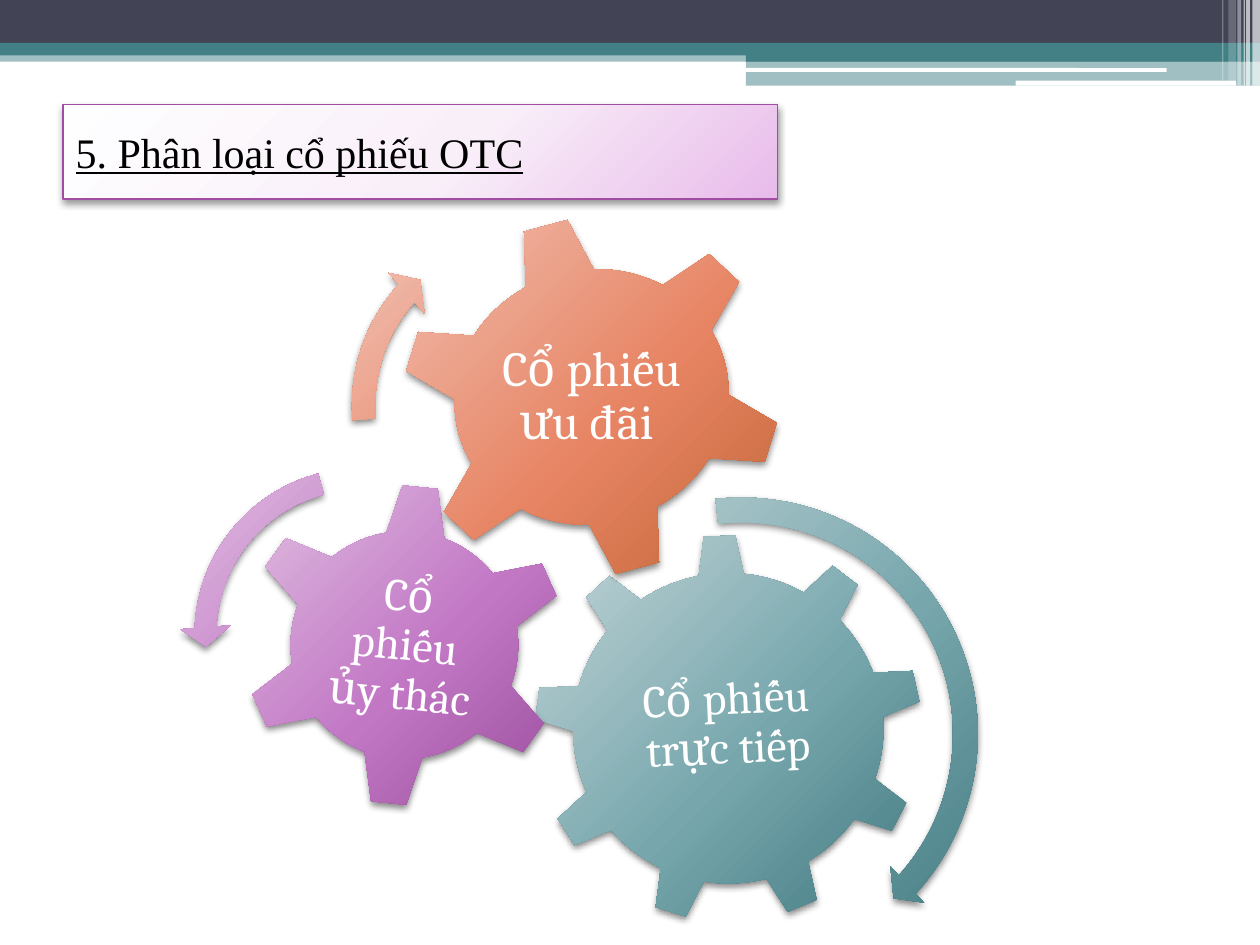
"""Builds a slide that sorts OTC shares into three interlocking gears."""
from pptx import Presentation, util as u
from pptx.dml.color import RGBColor
from pptx.enum import shapes, text
from pptx.oxml import parse_xml
from pptx.oxml.ns import nsdecls, qn

THEME = {
    "navy": "424456", "teal": "438086", "white": "FFFFFF", "black": "000000",
    "title_line": "A04DA3",
    "title_fill": ("FEFEFF", "F9EFF9", "E8BBEA"),
    "direct": ("C7D7DA", "77A7AD", "3E777D"),
    "trust": ("E2C6E3", "C277C5", "954898"),
    "preferred": ("F2C9BF", "E78463", "B75E2A"),
    "title_font": "Times New Roman", "title_size": 24,
    "gear_font": "Cambria", "gear_size": 26, "large_gear_size": 28,
}
KIND = shapes.MSO_SHAPE

deck = Presentation()
deck.slide_width, deck.slide_height = u.Inches(10), u.Inches(7.5)
CELL = deck.slide_width // 1000
page = deck.slides.add_slide(deck.slide_layouts[5])


def add_shape(kind, place, turn=0, adjustments=()):
    """Adds an unlined preset shape at a place given in grid cells."""
    shape = page.shapes.add_shape(kind, *(CELL * n for n in place))
    shape.rotation = turn
    for index, value in enumerate(adjustments):
        shape.adjustments[index] = value
    shape.line.fill.background()
    shape.shadow.inherit = False
    return shape


def shade(shape, colours, opacity=45):
    """Gives a lined shape a radial gradient and a soft shadow below."""
    stops = "".join(
        f'<a:gs pos="{place}000"><a:srgbClr val="{colour}"/></a:gs>'
        for place, colour in zip((0, 55, 100), colours))
    gradient = parse_xml(
        f'<a:gradFill {nsdecls("a")} rotWithShape="1"><a:gsLst>{stops}</a:gsLst>'
        '<a:path path="circle"><a:fillToRect l="-40000" t="-90000" '
        'r="140000" b="190000"/></a:path></a:gradFill>')
    shadow = parse_xml(
        f'<a:outerShdw {nsdecls("a")} blurRad="{u.Pt(4)}" dist="{u.Pt(2)}" '
        'dir="5400000" rotWithShape="0"><a:srgbClr val="000000">'
        f'<a:alpha val="{opacity}000"/></a:srgbClr></a:outerShdw>')
    properties = shape.element.spPr
    for old_fill in properties.findall(qn("a:solidFill")):
        properties.remove(old_fill)
    properties.find(qn("a:ln")).addprevious(gradient)
    shape.shadow.inherit = False
    properties.find(qn("a:effectLst")).append(shadow)


header_bars = [
    (KIND.RECTANGLE, (0, 40, 1000, 9), "teal", 50),
    (KIND.RECTANGLE, (0, 0, 1000, 34), "navy", 100),
    (KIND.RECTANGLE, (0, 34, 1000, 10), "teal", 100),
    (KIND.RECTANGLE, (592, 39, 408, 10), "teal", 100),
    (KIND.RECTANGLE, (592, 48, 408, 20), "teal", 50),
    (KIND.ROUNDED_RECTANGLE, (591, 54, 335, 3), "white", 100),
    (KIND.ROUNDED_RECTANGLE, (806, 64, 175, 4), "white", 100),
]
edge_stripes = [(994, 6, 68, 65), (989, 3, 68, 65), (987, 1, 68, 60),
                (982, 3, 68, 40), (975, 6, 64, 20), (970, 1, 64, 30)]
header_bars += [(KIND.RECTANGLE, (left, 0, width, height), "white", opacity)
                for left, width, height, opacity in edge_stripes]
for kind, place, colour, opacity in header_bars:
    bar = add_shape(kind, place)
    bar.fill.solid()
    bar.fill.fore_color.rgb = RGBColor.from_string(THEME[colour])
    if opacity < 100:
        tint = bar.element.spPr.find(qn("a:solidFill"))[0]
        tint.append(parse_xml(f'<a:alpha {nsdecls("a")} val="{opacity}000"/>'))

title = page.shapes.title
title.left, title.top, title.width, title.height = (
    CELL * n for n in (50, 83, 567, 75))
title.line.color.rgb = RGBColor.from_string(THEME["title_line"])
title.line.width = u.Pt(0.75)
shade(title, THEME["title_fill"], 40)
title.text_frame.vertical_anchor = text.MSO_ANCHOR.MIDDLE
para = title.text_frame.paragraphs[0]
para.alignment = text.PP_ALIGN.LEFT
span = para.add_run()
span.text = "5. Phân loại cổ phiếu OTC"
span.font.name = THEME["title_font"]
span.font.size = u.Pt(THEME["title_size"])
span.font.color.rgb = RGBColor.from_string(THEME["black"])
span.font.underline = True

gears = [
    (KIND.GEAR_9, (424, 424, 308, 308), -2.6, "direct",
     "Cổ phiếu trực tiếp", (485, 496, 184, 158), -2.6, "gear_size"),
    (KIND.GEAR_6, (192, 383, 258, 258), 5.7, "trust",
     "Cổ phiếu ủy thác ", (257, 449, 128, 127), 5.7, "gear_size"),
    (KIND.GEAR_6, (317, 171, 305, 288), -15, "preferred",
     "Cổ phiếu ưu đãi ", (385, 233, 169, 164), 0, "large_gear_size"),
]
for kind, place, turn, colours, label, label_place, label_turn, size in gears:
    shade(add_shape(kind, place, turn), THEME[colours])
    box = page.shapes.add_textbox(*(CELL * n for n in label_place))
    box.rotation = label_turn
    frame = box.text_frame
    frame.word_wrap = True
    frame.vertical_anchor = text.MSO_ANCHOR.MIDDLE
    frame.margin_left = frame.margin_right = CELL * 4
    frame.margin_top = frame.margin_bottom = CELL * 4
    para = frame.paragraphs[0]
    para.alignment = text.PP_ALIGN.CENTER
    para.line_spacing = 0.9
    span = para.add_run()
    span.text = label
    span.font.name = THEME["gear_font"]
    span.font.size = u.Pt(THEME[size])
    span.font.color.rgb = RGBColor.from_string(THEME["white"])

turning_arrows = [
    (KIND.CIRCULAR_ARROW, (391, 385, 395, 395), 0, "direct",
     (0.05, 2.99, 25.35, 158.22, 0.05)),
    (KIND.LEFT_CIRCULAR_ARROW, (143, 360, 287, 287), 7.8, "trust",
     (0.06, 4.3, 104.89, 148.38, 0.07)),
    (KIND.CIRCULAR_ARROW, (267, 167, 309, 309), 0, "preferred",
     (0.06, 3.94, 133.14, 105.08, 0.07)),
]
for kind, place, turn, colours, adjustments in turning_arrows:
    shade(add_shape(kind, place, turn, adjustments), THEME[colours])

deck.save("out.pptx")
